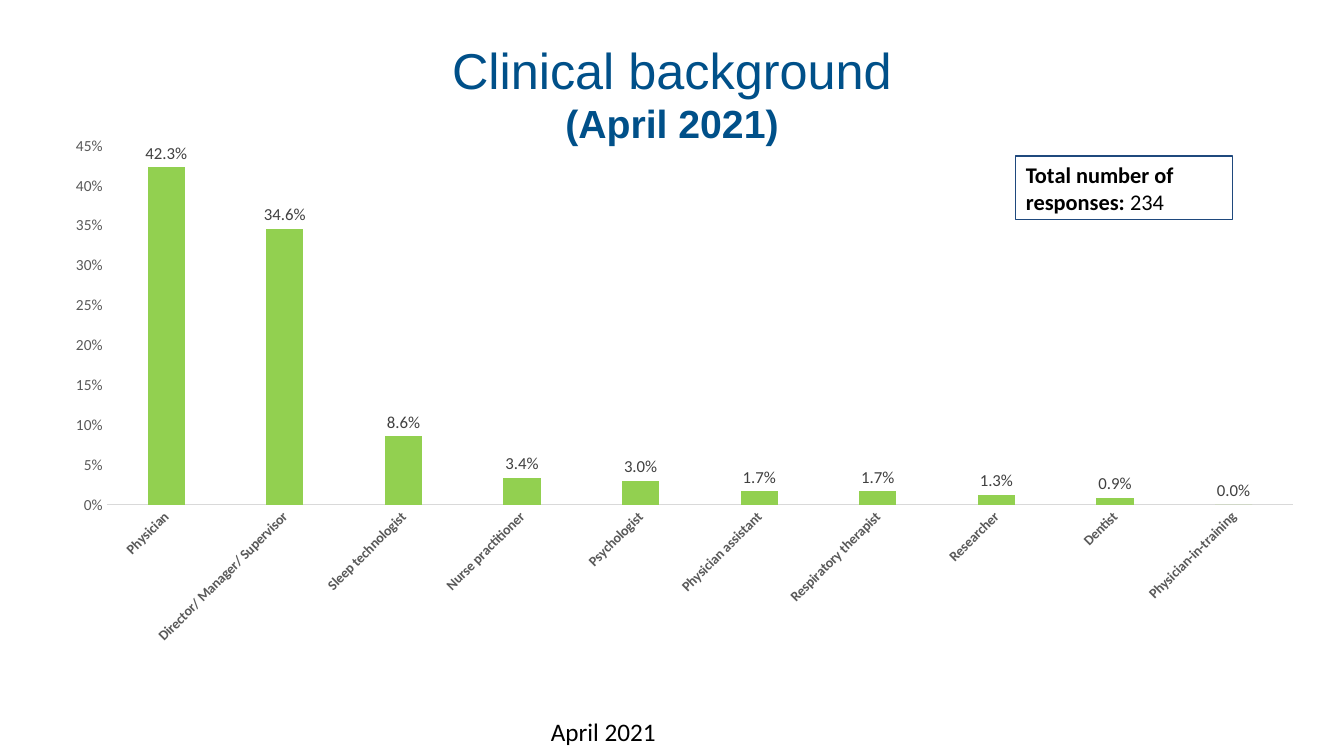
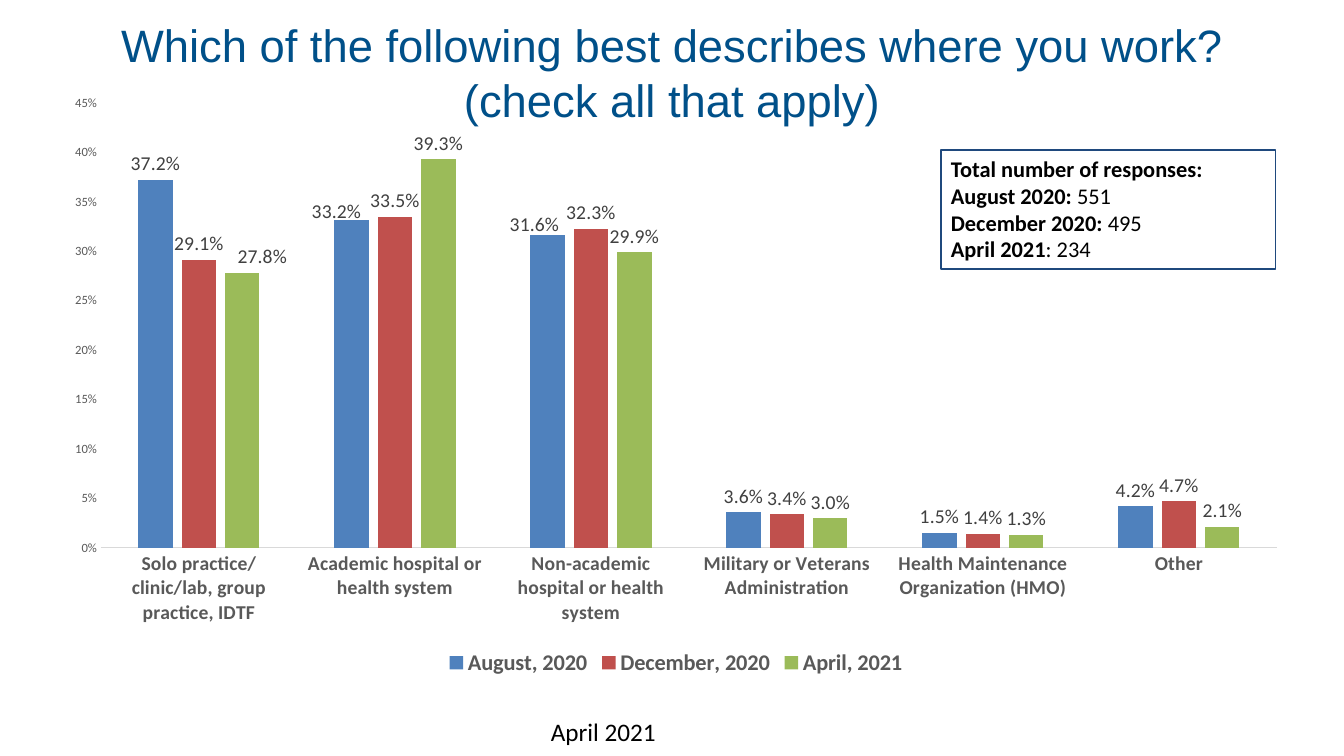
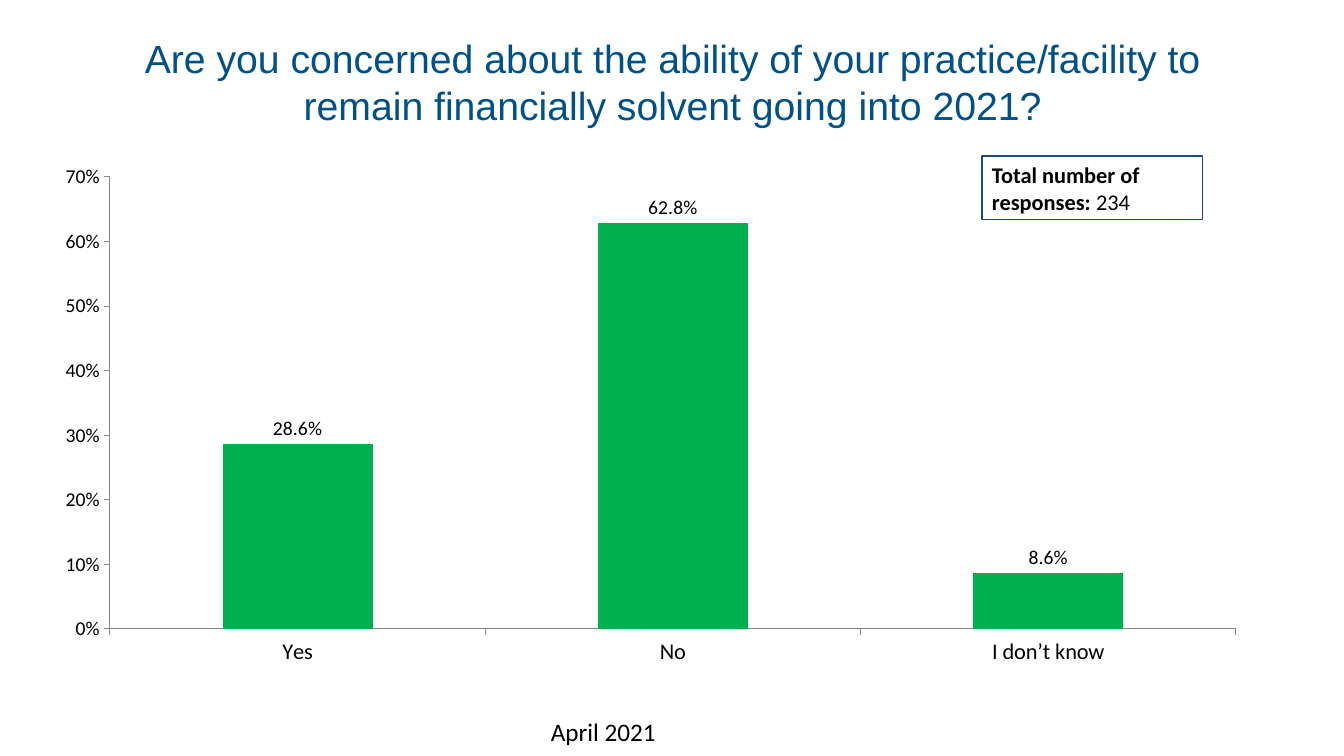
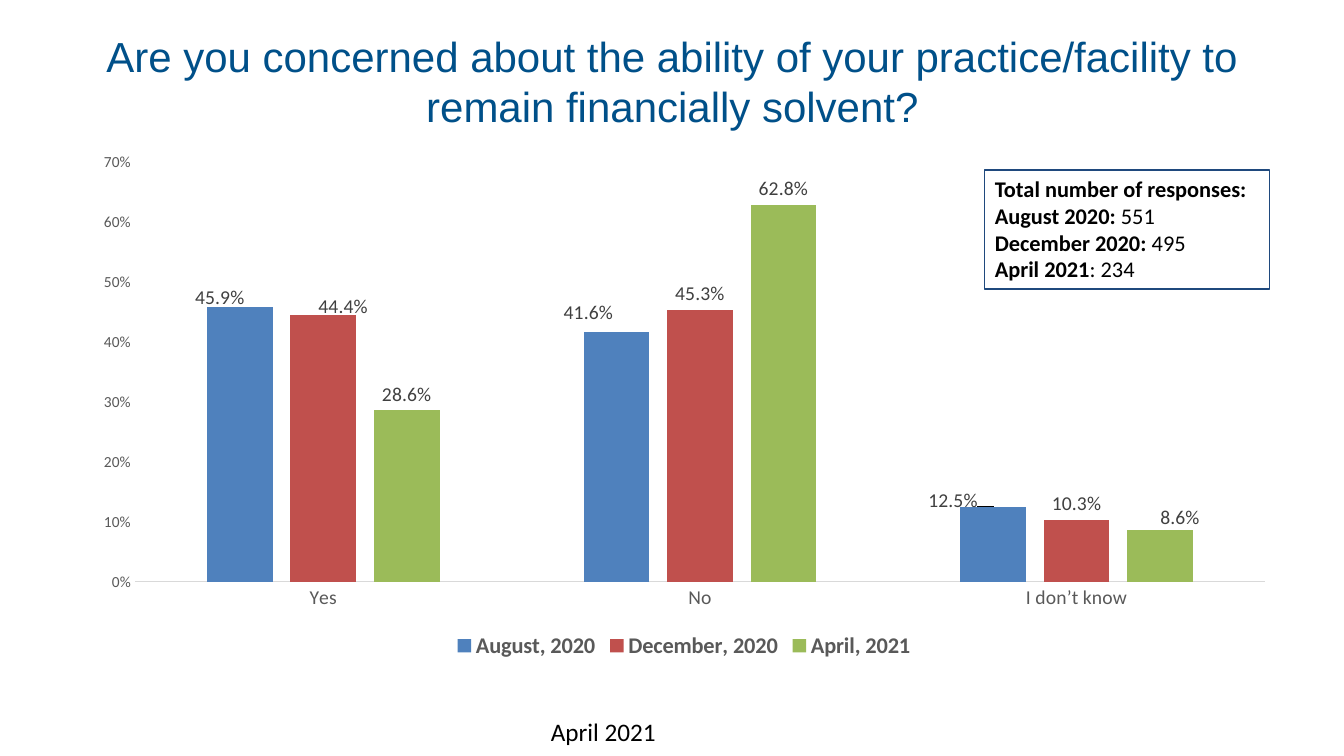
from dataclasses import dataclass

from pptx import Presentation
from pptx.chart.data import CategoryChartData
from pptx.dml.color import RGBColor
from pptx.enum.chart import XL_CHART_TYPE as ChartType
from pptx.enum.chart import XL_LABEL_POSITION as LabelPos
from pptx.enum.chart import XL_LEGEND_POSITION as LegendPos
from pptx.enum.chart import XL_TICK_MARK as Tick
from pptx.enum.shapes import MSO_SHAPE as Shape
from pptx.enum.text import MSO_ANCHOR as Anchor
from pptx.enum.text import MSO_AUTO_SIZE as AutoSize
from pptx.enum.text import PP_ALIGN as Align
from pptx.oxml import parse_xml
from pptx.oxml.ns import nsdecls
from pptx.util import Pt

EMU_PER_PX = 914400 / 100.8
SLIDE = (1344, 756)


@dataclass(frozen=True)
class Theme:
    heading: str = "Arial"
    body: str = "Calibri"
    title: str = "005089"
    text: str = "000000"
    muted: str = "595959"
    label: str = "404040"
    border: str = "1F497D"
    rule: str = "D9D9D9"
    axis: str = "868686"
    lime: str = "92D050"
    green: str = "00B050"
    waves: tuple = ("4F81BD", "C0504D", "9BBB59")
    note_size: float = 16
    footer_size: float = 18
    legend_size: float = 16
    hairline: float = 0.75


@dataclass(frozen=True)
class ChartStyle:
    colors: tuple
    cat_size: float
    val_size: float
    label_size: float
    top: float
    step: float
    cat_bold: bool = False
    slanted: bool = False
    legend: bool = False
    gap: int = 219
    overlap: int = -27
    plain: bool = False


T = Theme()
WAVES = ("August, 2020", "December, 2020", "April, 2021")
ANSWERS = ("Yes", "No", "I don’t know")
TOTAL = [[("Total number of responses: ", True), ("234", False)]]
TOTALS = [
    [("Total number of responses:", True)],
    [("August 2020: ", True), ("551", False)],
    [("December 2020: ", True), ("495", False)],
    [("April 2021", True), (": 234", False)],
]


def px(n):
    return round(n * EMU_PER_PX)


def box_emu(box):
    return [px(n) for n in box]


def set_font(font, size, color=T.text, name=T.body, bold=False):
    font.size, font.bold, font.name = Pt(size), bold, name
    font.color.rgb = RGBColor.from_string(color)


def add_run(p, text, **fmt):
    r = p.add_run()
    r.text = text
    set_font(r.font, **fmt)


def add_title(s, box, lines):
    sp = s.shapes.title
    sp.left, sp.top, sp.width, sp.height = box_emu(box)
    tf = sp.text_frame
    tf.auto_size, tf.vertical_anchor = AutoSize.NONE, Anchor.MIDDLE
    p = tf.paragraphs[0]
    p.alignment = Align.CENTER
    for i, (text, size, bold) in enumerate(lines):
        if i:
            p.add_line_break()
        add_run(p, text, size=size, bold=bold, color=T.title, name=T.heading)


def add_note(s, box, rows):
    sp = s.shapes.add_shape(Shape.RECTANGLE, *box_emu(box))
    sp.shadow.inherit = False
    sp.fill.background()
    sp.line.color.rgb = RGBColor.from_string(T.border)
    sp.line.width = Pt(T.hairline)
    tf = sp.text_frame
    tf.word_wrap, tf.vertical_anchor = True, Anchor.TOP
    for i, row in enumerate(rows):
        p = tf.add_paragraph() if i else tf.paragraphs[0]
        p.alignment = Align.LEFT
        for text, bold in row:
            add_run(p, text, size=T.note_size, bold=bold)


def add_footer(s, box, text):
    tf = s.shapes.add_textbox(*box_emu(box)).text_frame
    tf.word_wrap = True
    add_run(tf.paragraphs[0], text, size=T.footer_size)


def layout_xml(x, y, w=None, h=None):
    parts = [("x", x), ("y", y)]
    if w is not None:
        parts = [("layoutTarget", "inner"), ("xMode", "edge"), ("yMode", "edge"),
                 *parts, ("w", w), ("h", h)]
    body = "".join(f'<c:{tag} val="{val}"/>' for tag, val in parts)
    return parse_xml(f'<c:layout {nsdecls("c")}><c:manualLayout>{body}'
                     '</c:manualLayout></c:layout>')


def no_fill():
    return parse_xml(f'<c:spPr {nsdecls("c", "a")}><a:noFill/>'
                     '<a:ln><a:noFill/></a:ln></c:spPr>')


def place_plot(chart, box, plot):
    area = chart._chartSpace.xpath("c:chart/c:plotArea")[0]
    for old in area.xpath("c:layout"):
        area.remove(old)
    left, top, width, height = box
    x, y, w, h = plot
    area.insert(0, layout_xml((x - left) / width, (y - top) / height,
                              w / width, h / height))
    area.append(no_fill())
    chart._chartSpace.xpath("c:txPr")[0].addprevious(no_fill())


def style_axis(axis, size, style, line, bold=False):
    axis.has_major_gridlines = False
    axis.minor_tick_mark = Tick.NONE
    axis.major_tick_mark = Tick.OUTSIDE if style.plain else Tick.NONE
    color = T.text if style.plain else T.muted
    set_font(axis.tick_labels.font, size, color, bold=bold)
    if line:
        axis.format.line.color.rgb = RGBColor.from_string(line)
        axis.format.line.width = Pt(T.hairline)
    else:
        axis.format.line.fill.background()


def style_series(ser, color, style):
    ser.format.fill.solid()
    ser.format.fill.fore_color.rgb = RGBColor.from_string(color)
    ser.invert_if_negative = False
    labels = ser.data_labels
    labels.show_value = True
    labels.position = LabelPos.OUTSIDE_END
    labels.number_format, labels.number_format_is_linked = "0.0%", False
    set_font(labels.font, style.label_size, T.text if style.plain else T.label)


def shift_label(ser, index, dx, dy, box, style):
    label = ser.points[index].data_label
    set_font(label.font, style.label_size, T.label)
    label.position = LabelPos.OUTSIDE_END
    idx = ser._element.xpath(f"c:dLbls/c:dLbl/c:idx[@val='{index}']")[0]
    idx.addnext(parse_xml(f'<c:numFmt {nsdecls("c")} formatCode="0.0%" sourceLinked="0"/>'))
    idx.addnext(layout_xml(dx / box[2], dy / box[3]))


def add_column_chart(s, box, plot, cats, series, style, shifts=()):
    data = CategoryChartData(number_format="0.0%")
    data.categories = cats
    for name, vals in series:
        data.add_series(name, vals)
    chart = s.shapes.add_chart(ChartType.COLUMN_CLUSTERED, *box_emu(box), data).chart
    chart.has_title = False
    set_font(chart.font, 10)
    chart.has_legend = style.legend
    if style.legend:
        chart.legend.position = LegendPos.BOTTOM
        chart.legend.include_in_layout = False
        set_font(chart.legend.font, T.legend_size, T.muted, bold=True)
    cat, val = chart.category_axis, chart.value_axis
    style_axis(cat, style.cat_size, style, T.axis if style.plain else T.rule, style.cat_bold)
    style_axis(val, style.val_size, style, T.axis if style.plain else None)
    if style.slanted:
        cat._element.xpath("c:txPr/a:bodyPr")[0].set("rot", "-2700000")
    val.minimum_scale, val.maximum_scale, val.major_unit = 0, style.top, style.step
    val.tick_labels.number_format = "0%"
    val.tick_labels.number_format_is_linked = False
    bars = chart.plots[0]
    bars.vary_by_categories = False
    bars.gap_width, bars.overlap = style.gap, style.overlap
    for ser, color in zip(bars.series, style.colors):
        style_series(ser, color, style)
    for ser, index, dx, dy in shifts:
        shift_label(bars.series[ser], index, dx, dy, box, style)
    place_plot(chart, box, plot)


def add_survey_slide(prs, title_box, title, note_box, note, **chart):
    s = prs.slides.add_slide(prs.slide_layouts[5])
    add_title(s, title_box, title)
    add_note(s, note_box, note)
    add_footer(s, (541, 711, 425, 40), "April 2021")
    add_column_chart(s, **chart)


def main():
    prs = Presentation()
    prs.slide_width, prs.slide_height = box_emu(SLIDE)
    question_box = (93, 8, 1159, 146)

    add_survey_slide(
        prs, (67, 30, 1210, 126),
        [("Clinical background", 36, False), ("(April 2021)", 28, True)],
        (1016, 156, 217, 64), TOTAL,
        box=(50, 126, 1268, 529), plot=(107, 146, 1186, 359),
        cats=("Physician", "Director/ Manager/ Supervisor", "Sleep technologist",
              "Nurse practitioner", "Psychologist", "Physician assistant",
              "Respiratory therapist", "Researcher", "Dentist",
              "Physician-in-training"),
        series=[("Series 1", (0.423, 0.346, 0.086, 0.034, 0.03,
                              0.017, 0.017, 0.013, 0.009, 0))],
        style=ChartStyle((T.lime,), 10, 11, 12, 0.45, 0.05,
                         cat_bold=True, slanted=True))

    add_survey_slide(
        prs, (67, 9, 1210, 126),
        [("Which of the following best describes where you work? "
          "(check all that apply)", 32.4, False)],
        (941, 150, 335, 119), TOTALS,
        box=(50, 84, 1252, 597), plot=(101, 103, 1176, 445),
        cats=("Solo practice/clinic/lab, group practice, IDTF",
              "Academic hospital or health system",
              "Non-academic hospital or health system",
              "Military or Veterans Administration",
              "Health Maintenance Organization (HMO)", "Other"),
        series=list(zip(WAVES, ((0.372, 0.332, 0.316, 0.036, 0.015, 0.042),
                                (0.291, 0.335, 0.323, 0.034, 0.014, 0.047),
                                (0.278, 0.393, 0.299, 0.03, 0.013, 0.021)))),
        style=ChartStyle(T.waves, 14, 9, 14, 0.45, 0.05, cat_bold=True, legend=True),
        shifts=((0, 1, -15, 8), (0, 2, -13, 5), (2, 0, 20, 0)))

    add_survey_slide(
        prs, question_box,
        [("Are you concerned about the ability of your practice/facility to "
          "remain financially solvent going into 2021?", 28, False)],
        (982, 156, 221, 64), TOTAL,
        box=(42, 154, 1218, 523), plot=(110, 177, 1126, 452),
        cats=ANSWERS, series=[("Series 1", (0.286, 0.628, 0.086))],
        style=ChartStyle((T.green,), 16, 14, 14, 0.7, 0.1,
                         gap=150, overlap=0, plain=True))

    add_survey_slide(
        prs, question_box,
        [("Are you concerned about the ability of your practice/facility to "
          "remain financially solvent?", 30, False)],
        (985, 170, 285, 119), TOTALS,
        box=(79, 143, 1210, 521), plot=(135, 162, 1130, 420),
        cats=ANSWERS,
        series=list(zip(WAVES, ((0.459, 0.416, 0.125),
                                (0.444, 0.453, 0.103),
                                (0.286, 0.628, 0.086)))),
        style=ChartStyle(T.waves, 14, 11, 14, 0.7, 0.1, legend=True),
        shifts=((0, 0, -20, 7), (0, 1, -28, -4), (0, 2, -40, 10),
                (1, 0, 20, 7), (2, 2, 20, 3)))

    prs.save("out.pptx")


if __name__ == "__main__":
    main()
